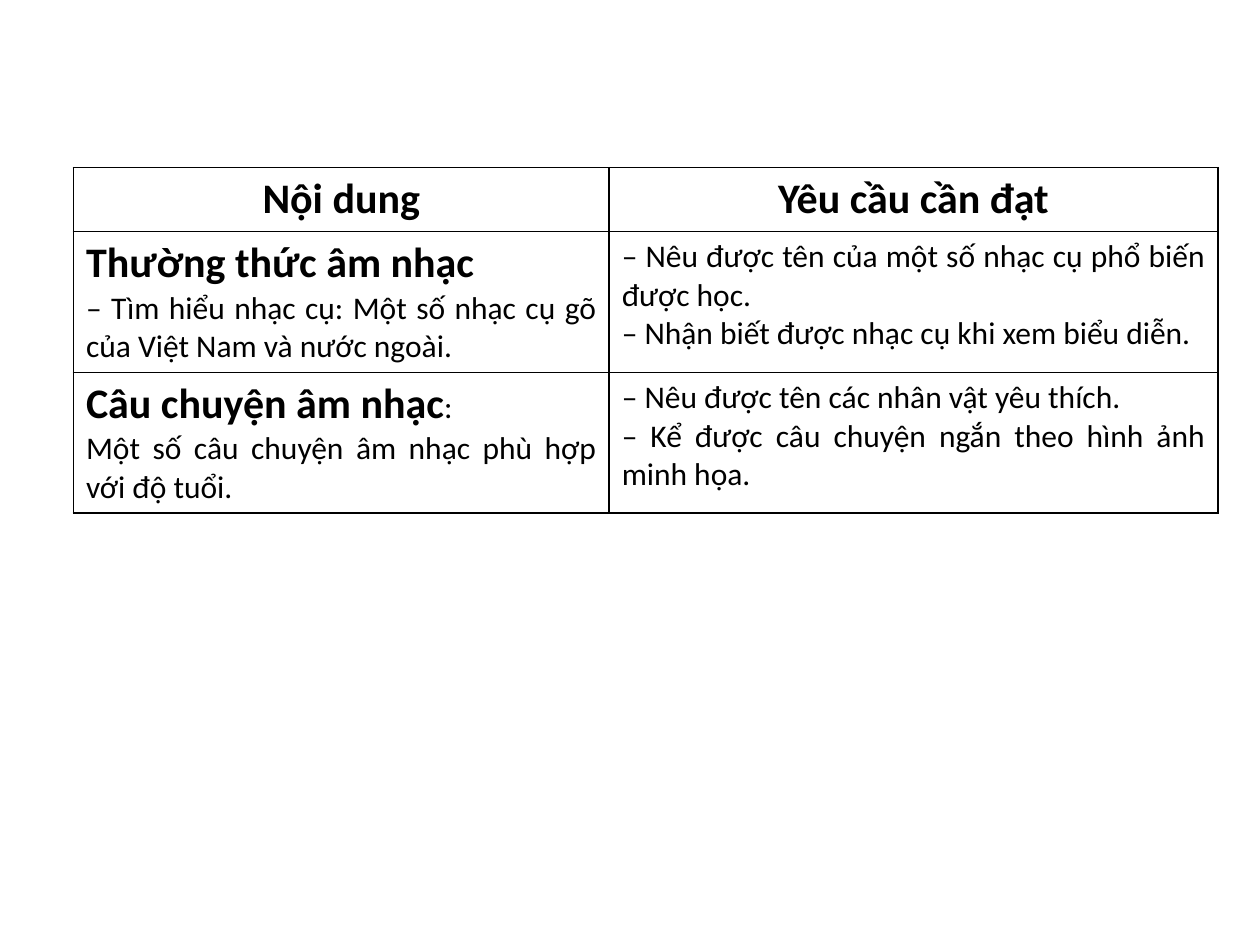
import pptx
import pptx.util
import pptx.dml.color
import pptx.enum.text
import lxml.etree
from pptx.util import Cm

BLACK = pptx.dml.color.RGBColor(0, 0, 0)
WHITE = pptx.dml.color.RGBColor(255, 255, 255)
FONT = "Calibri"
ALIGN = pptx.enum.text.PP_ALIGN

# A cell is a list of paragraphs, a paragraph a list of (text, is heading).
ROWS = [
    [
        [[("Nội dung", True)]],
        [[("Yêu cầu cần đạt", True)]],
    ],
    [
        [[("Thường thức âm nhạc", True)],
         [("– Tìm hiểu nhạc cụ: Một số nhạc cụ gõ của Việt Nam và nước ngoài.", False)]],
        [[("– Nêu được tên của một số nhạc cụ phổ biến được học.", False)],
         [("– Nhận biết được nhạc cụ khi xem biểu diễn.", False)]],
    ],
    [
        [[("Câu chuyện âm nhạc", True), (":", False)],
         [("Một số câu chuyện âm nhạc phù hợp với độ tuổi.", False)]],
        [[("– Nêu được tên các nhân vật yêu thích.", False)],
         [("– Kể được câu chuyện ngắn theo hình ảnh minh họa.", False)]],
    ],
]
WIDTHS = [10.8, 12.27]
HEIGHTS = [1.28, 2.83, 2.83]
LEFT, TOP = 1.48, 3.38


def write(para, text, size=18, bold=False, color=BLACK):
    run = para.add_run()
    run.text = text
    run.font.name = FONT
    run.font.size = pptx.util.Pt(size)
    run.font.bold = bold
    run.font.color.rgb = color


def border(cell, width=1, color=BLACK):
    """Draw all four edges of a cell; the lines must precede its fill."""
    props = cell._tc.get_or_add_tcPr()
    space = "{http://schemas.openxmlformats.org/drawingml/2006/main}"
    for spot, side in enumerate(("lnL", "lnR", "lnT", "lnB")):
        line = lxml.etree.Element(space + side, w=str(pptx.util.Pt(width)))
        fill = lxml.etree.SubElement(line, space + "solidFill")
        lxml.etree.SubElement(fill, space + "srgbClr", val=str(color))
        props.insert(spot, line)


def fill_cell(cell, paras, align):
    cell.fill.solid()
    cell.fill.fore_color.rgb = WHITE
    border(cell)
    frame = cell.text_frame
    for i, runs in enumerate(paras):
        para = frame.add_paragraph() if i else frame.paragraphs[0]
        para.alignment = align
        for text, head in runs:
            write(para, text, size=24 if head else 18, bold=head)


def main():
    deck = pptx.Presentation()
    deck.slide_width, deck.slide_height = Cm(25.4), Cm(19.05)
    slide = deck.slides.add_slide(deck.slide_layouts[6])
    table = slide.shapes.add_table(
        len(ROWS), len(WIDTHS), Cm(LEFT), Cm(TOP),
        Cm(sum(WIDTHS)), Cm(sum(HEIGHTS))).table
    for col, width in zip(table.columns, WIDTHS):
        col.width = Cm(width)
    for r, (row, height) in enumerate(zip(ROWS, HEIGHTS)):
        table.rows[r].height = Cm(height)
        for c, paras in enumerate(row):
            fill_cell(table.cell(r, c), paras, ALIGN.JUSTIFY if r else ALIGN.CENTER)
    deck.save("out.pptx")


if __name__ == "__main__":
    main()
